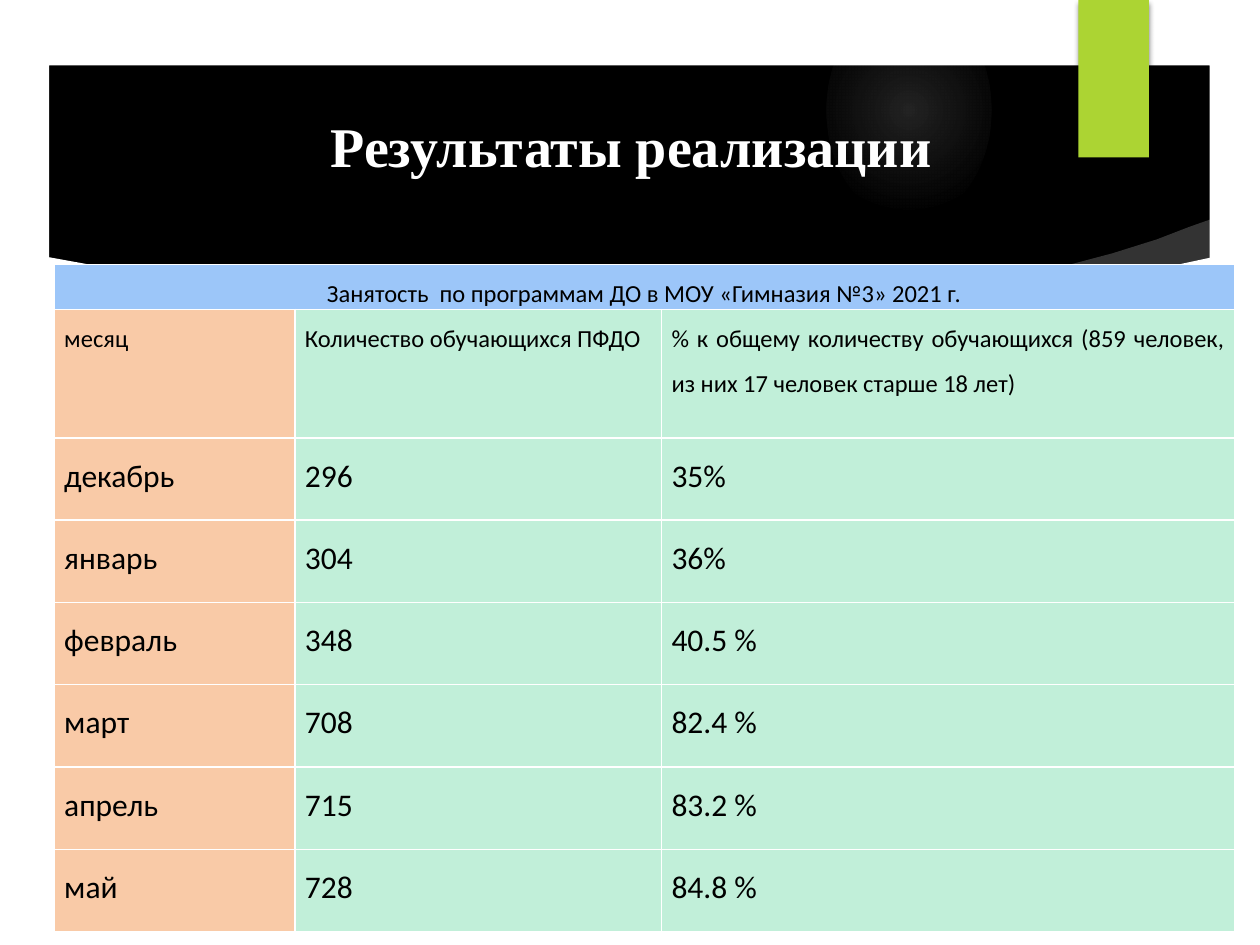
from lxml import etree
from pptx import Presentation
from pptx.dml.color import RGBColor
from pptx.enum.shapes import MSO_SHAPE as SHAPE
from pptx.enum.text import MSO_ANCHOR as ANCHOR, PP_ALIGN as ALIGN
from pptx.oxml import parse_xml
from pptx.oxml.ns import nsdecls, qn
from pptx.util import Inches, Pt

BLACK = RGBColor(0x00, 0x00, 0x00)
WHITE = RGBColor(0xFF, 0xFF, 0xFF)
LIME = RGBColor(0xAC, 0xD4, 0x33)
BLUE = RGBColor(0x9C, 0xC6, 0xF9)
PEACH = RGBColor(0xF9, 0xCA, 0xA7)
MINT = RGBColor(0xC1, 0xEF, 0xD9)

GLOW_STOPS = [(0, 14), (36, 7), (73, 0)]  # position %, opacity %

# Upper edges of the curved areas, left to right, in inches
PANEL_CURVE = [
    (0.38, 2.04), (0.71, 2.1), (1.19, 2.18), (1.87, 2.27), (2.7, 2.36),
    (3.66, 2.43), (4.55, 2.47), (5.31, 2.48), (6.1, 2.46), (6.91, 2.42),
    (7.74, 2.35), (8.58, 2.24), (9.21, 2.13), (9.63, 2.04),
]
SWOOSH_CURVE = [
    (6.97, 2.36), (7.41, 2.3), (7.81, 2.24), (8.15, 2.18), (8.49, 2.1),
    (8.83, 2.01), (9.18, 1.9), (9.44, 1.8), (9.61, 1.74),
]

COLUMN_WIDTHS = [1.91, 2.91, 4.55]
ROW_HEIGHTS = [0.33, 1.02] + [3.92 / 6] * 6
TABLE_TITLE = "Занятость  по программам ДО в МОУ «Гимназия №3» 2021 г."
HEADINGS = (
    "месяц",
    "Количество обучающихся ПФДО",
    "% к общему количеству обучающихся (859 человек, из них 17 человек старше 18 лет)",
)
MONTHS = [
    ("декабрь", "296", "35%"),
    ("январь", "304", "36%"),
    ("февраль", "348", "40.5 %"),
    ("март", "708", "82.4 %"),
    ("апрель", "715", "83.2 %"),
    ("май", "728", "84.8 %"),
]


def fill_plain(shape, color):
    shape.shadow.inherit = False
    shape.fill.solid()
    shape.fill.fore_color.rgb = color
    shape.line.fill.background()


def add_outline(slide, contours, color):
    """Draw one filled shape from closed contours given in inches."""
    builder = None
    for contour in contours:
        start, *rest = [(Inches(x), Inches(y)) for x, y in contour]
        if builder is None:
            builder = slide.shapes.build_freeform(*start)
        else:
            builder.move_to(*start)
        builder.add_line_segments(rest, close=True)
    outline = builder.convert_to_shape()
    fill_plain(outline, color)
    return outline


def box_corners(left, top, right, bottom):
    return [(left, top), (left, bottom), (right, bottom), (right, top)]


def add_glow(slide, left, top, width, height):
    glow = slide.shapes.add_shape(
        SHAPE.OVAL, Inches(left), Inches(top), Inches(width), Inches(height))
    fill_plain(glow, WHITE)
    stops = "".join(
        f'<a:gs pos="{position * 1000}"><a:srgbClr val="F7F7F7">'
        f'<a:alpha val="{opacity * 1000}"/></a:srgbClr></a:gs>'
        for position, opacity in GLOW_STOPS)
    gradient = parse_xml(
        f'<a:gradFill {nsdecls("a")} rotWithShape="1"><a:gsLst>{stops}</a:gsLst>'
        '<a:path path="circle"><a:fillToRect l="50000" t="50000" r="50000" b="50000"/>'
        '</a:path></a:gradFill>')
    properties = glow.element.spPr
    properties.replace(properties.find(qn("a:solidFill")), gradient)


def add_tab(slide, left, top, width, height):
    tab = slide.shapes.add_shape(
        SHAPE.RECTANGLE, Inches(left), Inches(top), Inches(width), Inches(height))
    fill_plain(tab, LIME)
    effects = tab.element.spPr.find(qn("a:effectLst"))
    effects.append(parse_xml(
        f'<a:outerShdw {nsdecls("a")} blurRad="{Pt(3)}" dist="{Pt(2)}" dir="5400000">'
        '<a:srgbClr val="000000"><a:alpha val="45000"/></a:srgbClr></a:outerShdw>'))


def add_backdrop(slide, width, height):
    slide.background.fill.solid()
    slide.background.fill.fore_color.rgb = BLACK
    add_glow(slide, 6.56, 0, 1.31, 1.75)

    # Translucent swoosh
    swoosh = add_outline(
        slide, [SWOOSH_CURVE + [(9.68, 2.22), (8.4, 2.39), (7.01, 2.42)]], WHITE)
    color = swoosh.element.spPr.find(qn("a:solidFill"))[0]
    etree.SubElement(color, qn("a:alpha")).set("val", "20000")

    # Curved panel and frame
    add_outline(slide, [PANEL_CURVE + [(9.63, 7), (0.38, 7)]], WHITE)
    add_outline(slide, [box_corners(0, 0, width, height),
                        box_corners(0.39, 0.52, 9.6, 6.98)[::-1]], WHITE)
    add_tab(slide, 8.56, 0, 0.56, 1.25)


def place_title(slide, left, top, width, height):
    title = slide.shapes.title
    title.element.getparent().append(title.element)  # bring to front
    title.left, title.top = Inches(left), Inches(top)
    title.width, title.height = Inches(width), Inches(height)
    title.text_frame.vertical_anchor = ANCHOR.MIDDLE
    heading = title.text_frame.paragraphs[0]
    heading.alignment = ALIGN.CENTER
    run = heading.add_run()
    run.text = "Результаты реализации"
    run.font.name = "Times New Roman"
    run.font.size = Pt(32)
    run.font.bold = True
    run.font.color.rgb = WHITE


def style_cell(cell, color):
    properties = cell._tc.get_or_add_tcPr()
    for side in ("lnL", "lnR", "lnT", "lnB"):
        properties.append(parse_xml(
            f'<a:{side} {nsdecls("a")} w="{Pt(1)}"><a:solidFill>'
            f'<a:srgbClr val="{WHITE}"/></a:solidFill></a:{side}>'))
    cell.fill.solid()
    cell.fill.fore_color.rgb = color
    cell.margin_left = cell.margin_right = Inches(0.08)
    cell.margin_top = cell.margin_bottom = 0


def write_cell(cell, text, size, alignment):
    paragraph = cell.text_frame.paragraphs[0]
    paragraph.alignment = alignment
    paragraph.line_spacing = 1.5
    run = paragraph.add_run()
    run.text = text
    run.font.name = "Calibri"
    run.font.size = Pt(size)
    run.font.color.rgb = BLACK


def add_enrolment_table(slide, left, top):
    table = slide.shapes.add_table(
        len(ROW_HEIGHTS), len(COLUMN_WIDTHS), Inches(left), Inches(top),
        Inches(sum(COLUMN_WIDTHS)), Inches(sum(ROW_HEIGHTS))).table
    table.first_row = table.horz_banding = False
    for column, width in zip(table.columns, COLUMN_WIDTHS):
        column.width = Inches(width)
    for row, height in zip(table.rows, ROW_HEIGHTS):
        row.height = Inches(height)

    # Title row across all columns
    for cell in table.rows[0].cells:
        style_cell(cell, BLUE)
    table.cell(0, 0).merge(table.cell(0, 2))
    write_cell(table.cell(0, 0), TABLE_TITLE, 14, ALIGN.CENTER)

    # Headings and months
    for row_index, texts in enumerate([HEADINGS] + MONTHS, start=1):
        for column_index, text in enumerate(texts):
            cell = table.cell(row_index, column_index)
            style_cell(cell, MINT if column_index else PEACH)
            write_cell(cell, text, 14 if row_index == 1 else 18, ALIGN.JUSTIFY)


def main():
    deck = Presentation()
    deck.slide_width, deck.slide_height = Inches(10), Inches(7.5)
    slide = deck.slides.add_slide(deck.slide_layouts[5])
    add_backdrop(slide, 10, 7.5)
    place_title(slide, 0.91, 0.29, 8.2, 1.73)
    add_enrolment_table(slide, 0.43, 2.1)
    deck.save("out.pptx")


if __name__ == "__main__":
    main()
